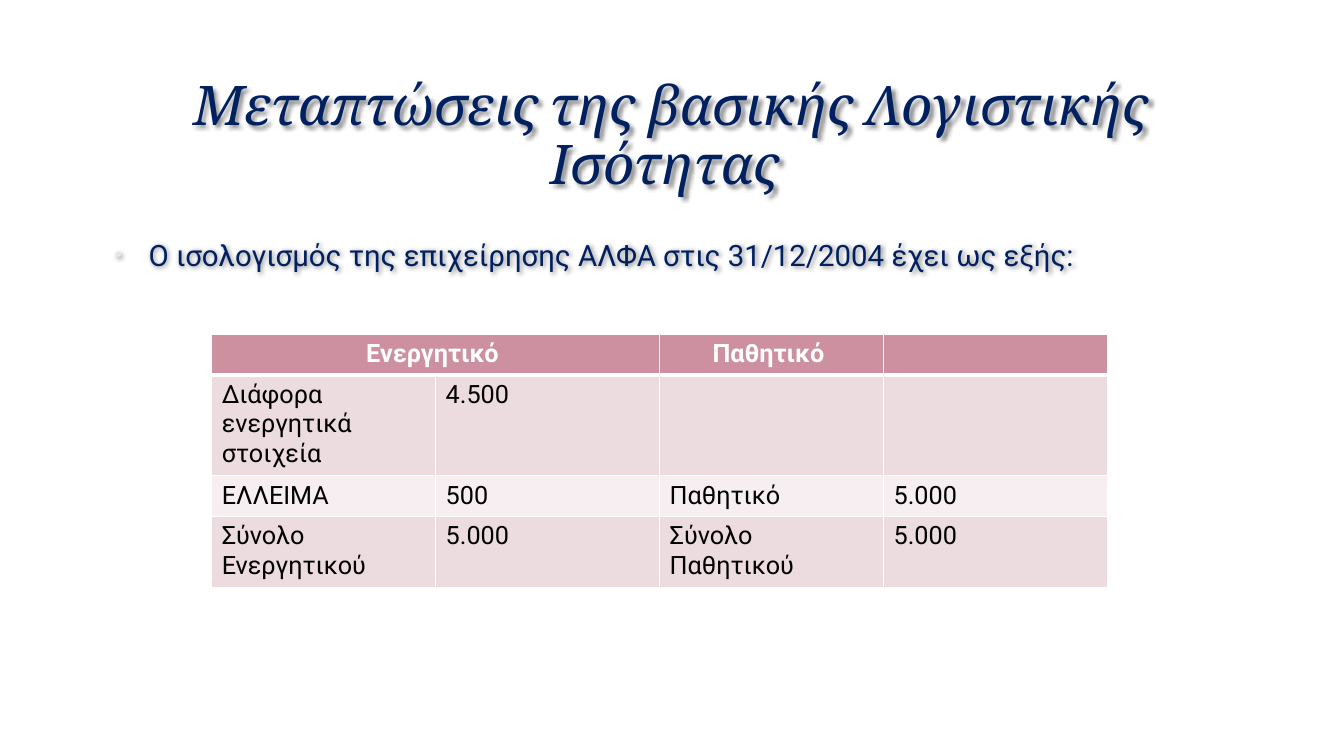
from dataclasses import dataclass

from lxml import etree
from pptx import Presentation
from pptx.dml.color import RGBColor
from pptx.enum.text import MSO_ANCHOR, PP_ALIGN
from pptx.oxml.ns import qn
from pptx.util import Pt

LEFT, CENTER = PP_ALIGN.LEFT, PP_ALIGN.CENTER
TOP, MIDDLE = MSO_ANCHOR.TOP, MSO_ANCHOR.MIDDLE
BLANK_LAYOUT = 6


@dataclass(frozen=True)
class Theme:
    navy: str = "002060"
    white: str = "FFFFFF"
    black: str = "000000"
    shadow: str = "000000"
    bullet: str = "E2E8E6"
    header_fill: str = "CC90A0"
    odd_fill: str = "ECDBDF"
    even_fill: str = "F6EEF0"
    title_font: str = "Cambria"
    body_font: str = "Roboto"
    title_size: int = 39
    body_size: int = 21
    table_size: int = 18


theme = Theme()


def write_text(frame, text, *, size, color, font=theme.body_font, bold=False,
               italic=False, align=LEFT, anchor=TOP, line_spacing=1.0):
    frame.word_wrap = True
    frame.vertical_anchor = anchor
    paragraph = frame.paragraphs[0]
    paragraph.alignment = align
    paragraph.line_spacing = line_spacing
    paragraph.font.size = Pt(size)
    if text:
        run = paragraph.add_run()
        run.text = text
        run.font.name = font
        run.font.size = Pt(size)
        run.font.bold = bold
        run.font.italic = italic
        run.font.color.rgb = RGBColor.from_string(color)
    return paragraph


def add_xml(parent, tag, **attributes):
    return etree.SubElement(parent, qn(tag), attributes)


presentation = Presentation()
presentation.slide_width = Pt(960)
presentation.slide_height = Pt(540)
slide = presentation.slides.add_slide(presentation.slide_layouts[BLANK_LAYOUT])

# Title and introduction
title = slide.shapes.add_textbox(Pt(72), Pt(48.2), Pt(815), Pt(99.4))
write_text(title.text_frame, "Μεταπτώσεις της βασικής Λογιστικής Ισότητας ",
           size=theme.title_size, color=theme.navy, font=theme.title_font,
           italic=True, align=CENTER, anchor=MIDDLE, line_spacing=0.9)

introduction = slide.shapes.add_textbox(Pt(72), Pt(163.4), Pt(815), Pt(292.3))
paragraph = write_text(
    introduction.text_frame,
    "Ο ισολογισμός της επιχείρησης ΑΛΦΑ στις 31/12/2004 έχει ως εξής:",
    size=theme.body_size, color=theme.navy, line_spacing=1.1)
paragraph.space_before = Pt(4.2)
paragraph.space_after = Pt(6)
properties = paragraph._p.get_or_add_pPr()
properties.set("marL", str(Pt(27)))
properties.set("indent", str(Pt(-24)))
add_xml(add_xml(properties, "a:buClr"), "a:srgbClr", val=theme.bullet)
add_xml(properties, "a:buSzPct", val="70000")
add_xml(properties, "a:buFont", typeface="Arial")
add_xml(properties, "a:buChar", char="•")

for shape in (title, introduction):
    effects = add_xml(shape._element.spPr, "a:effectLst")
    shadow = add_xml(effects, "a:outerShdw", blurRad=str(Pt(3)),
                     dist=str(Pt(2)), dir="2700000", algn="tl")
    shadow_color = add_xml(shadow, "a:srgbClr", val=theme.shadow)
    add_xml(shadow_color, "a:alpha", val="45000")

# Balance sheet
balance_rows = [
    ["Ενεργητικό ", "", "Παθητικό ", ""],
    ["Διάφορα ενεργητικά στοιχεία", "4.500", "", ""],
    ["ΕΛΛΕΙΜΑ", "500", "Παθητικό", "5.000"],
    ["Σύνολο Ενεργητικού", "5.000", "Σύνολο Παθητικού", "5.000"],
]
row_heights = [29.2, 70, 29.2, 49.6]
column_width = 160
table = slide.shapes.add_table(
    len(balance_rows), 4, Pt(151.2), Pt(238.6),
    Pt(4 * column_width), Pt(sum(row_heights))).table
for column in table.columns:
    column.width = Pt(column_width)

for row_index, (values, height) in enumerate(zip(balance_rows, row_heights)):
    table.rows[row_index].height = Pt(height)
    is_header = row_index == 0
    if is_header:
        fill = theme.header_fill
    else:
        fill = theme.odd_fill if row_index % 2 else theme.even_fill
    for column_index, value in enumerate(values):
        cell = table.cell(row_index, column_index)
        write_text(cell.text_frame, value, size=theme.table_size,
                   color=theme.white if is_header else theme.black,
                   bold=is_header, align=CENTER if is_header else LEFT)
        cell_properties = cell._tc.get_or_add_tcPr()
        for side in ("L", "R", "T", "B"):
            thick = (is_header and side == "B") or (row_index == 1 and side == "T")
            border = add_xml(cell_properties, f"a:ln{side}",
                             w=str(Pt(3 if thick else 1)))
            add_xml(add_xml(border, "a:solidFill"), "a:srgbClr", val=theme.white)
        cell.fill.solid()
        cell.fill.fore_color.rgb = RGBColor.from_string(fill)

table.cell(0, 0).merge(table.cell(0, 1))

presentation.save("out.pptx")
